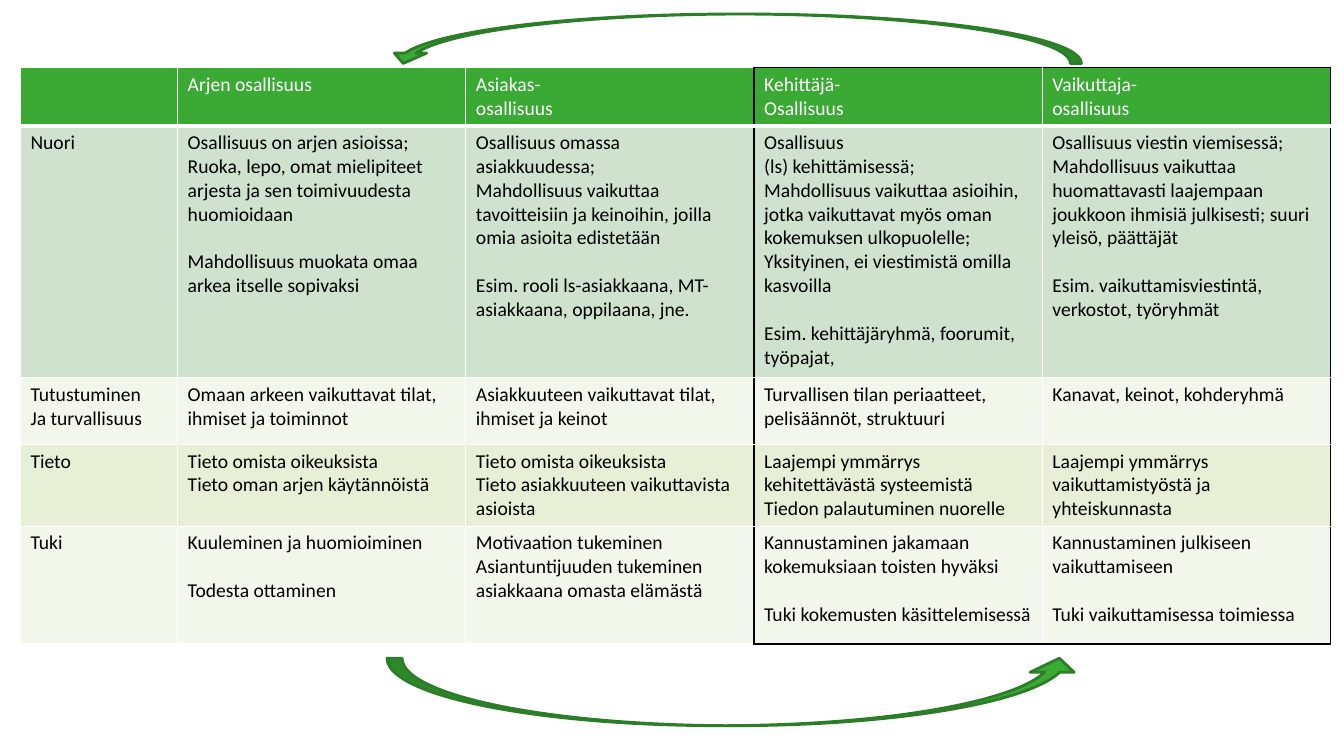
import pptx
import pptx.dml.color
import pptx.enum.shapes
import pptx.util
import lxml.etree

Pt = pptx.util.Pt
NS = "http://schemas.openxmlformats.org/drawingml/2006/main"
GREEN, WHITE, BLACK = "3AAA35", "FFFFFF", "000000"


def paint(fill, hue):
    fill.solid()
    fill.fore_color.rgb = pptx.dml.color.RGBColor.from_string(hue)


def edge(cell, side, hue, width):
    """Draw one border of a cell; side is L, R, T or B."""
    line = lxml.etree.SubElement(cell._tc.get_or_add_tcPr(), f"{{{NS}}}ln{side}", w=str(Pt(width)))
    solid = lxml.etree.SubElement(line, f"{{{NS}}}solidFill")
    lxml.etree.SubElement(solid, f"{{{NS}}}srgbClr", val=hue)


deck = pptx.Presentation()
deck.slide_width, deck.slide_height = Pt(960), Pt(540)
slide = deck.slides.add_slide(deck.slide_layouts[6])

# An empty line in a cell's text stands for a one-line gap.
grid = [
    ["", "Arjen osallisuus", "Asiakas-\nosallisuus", "Kehittäjä-\nOsallisuus",
     "Vaikuttaja-\nosallisuus"],
    ["Nuori",
     "Osallisuus on arjen asioissa;\nRuoka, lepo, omat mielipiteet arjesta ja sen "
     "toimivuudesta huomioidaan\n\nMahdollisuus muokata omaa arkea itselle sopivaksi",
     "Osallisuus omassa asiakkuudessa;\nMahdollisuus vaikuttaa tavoitteisiin ja keinoihin, "
     "joilla omia asioita edistetään\n\nEsim. rooli ls-asiakkaana, MT-asiakkaana, oppilaana, jne.",
     "Osallisuus\n(ls) kehittämisessä;\nMahdollisuus vaikuttaa asioihin, jotka vaikuttavat "
     "myös oman kokemuksen ulkopuolelle;\nYksityinen, ei viestimistä omilla kasvoilla\n\n"
     "Esim. kehittäjäryhmä, foorumit, työpajat,",
     "Osallisuus viestin viemisessä;\nMahdollisuus vaikuttaa huomattavasti laajempaan joukkoon "
     "ihmisiä julkisesti; suuri yleisö, päättäjät\n\n"
     "Esim. vaikuttamisviestintä, verkostot, työryhmät"],
    ["Tutustuminen\nJa turvallisuus",
     "Omaan arkeen vaikuttavat tilat, ihmiset ja toiminnot",
     "Asiakkuuteen vaikuttavat tilat, ihmiset ja keinot",
     "Turvallisen tilan periaatteet, pelisäännöt, struktuuri",
     "Kanavat, keinot, kohderyhmä"],
    ["Tieto",
     "Tieto omista oikeuksista\nTieto oman arjen käytännöistä",
     "Tieto omista oikeuksista\nTieto asiakkuuteen vaikuttavista asioista",
     "Laajempi ymmärrys kehitettävästä systeemistä\nTiedon palautuminen nuorelle",
     "Laajempi ymmärrys vaikuttamistyöstä ja yhteiskunnasta"],
    ["Tuki",
     "Kuuleminen ja huomioiminen\n\nTodesta ottaminen",
     "Motivaation tukeminen\nAsiantuntijuuden tukeminen asiakkaana omasta elämästä",
     "Kannustaminen jakamaan kokemuksiaan toisten hyväksi\n\nTuki kokemusten käsittelemisessä",
     "Kannustaminen julkiseen vaikuttamiseen\n\nTuki vaikuttamisessa toimiessa"],
]
widths = [112.3] + [205.9] * 4
heights = [41.4, 180, 47.5, 58.5, 84.2]
fills = [GREEN, "CEE2CE", "F3F7EB", "E7EFD7", "F3F7EB"]
style = {"name": "Calibri", "size": Pt(14), "bold": False}
last = len(grid) - 1
box = 3  # first column of the black frame

table = slide.shapes.add_table(len(heights), len(widths), Pt(14.6), Pt(48.5),
                               Pt(sum(widths)), Pt(sum(heights))).table
table.first_row = table.horz_banding = False
for col, width in zip(table.columns, widths):
    col.width = Pt(width)

for r, texts in enumerate(grid):
    table.rows[r].height = Pt(heights[r])
    for c, text in enumerate(texts):
        cell = table.cell(r, c)
        dark = {"L": c == box, "R": c in (box - 1, last),
                "T": c >= box and r == 0, "B": c >= box and r == last}
        for side, black in dark.items():
            edge(cell, side, BLACK if black else WHITE, 3 if r == 0 and side == "B" else 1)
        paint(cell.fill, fills[r])

        frame = cell.text_frame
        for i, block in enumerate(text.split("\n\n")):
            for j, words in enumerate(block.split("\n")):
                para = frame.add_paragraph() if i or j else frame.paragraphs[0]
                para.text = words
                if i and j == 0:
                    para.space_before = Pt(17)
                for key, value in style.items():
                    setattr(para.font, key, value)
                paint(para.font.fill, BLACK if r else WHITE)

for top, height, flip in [(10, 35.3, "flipH"), (470.2, 48.2, "flipV")]:
    arrow = slide.shapes.add_shape(pptx.enum.shapes.MSO_SHAPE.CURVED_DOWN_ARROW,
                                   Pt(276.5), Pt(top), Pt(496), Pt(height))
    for i, value in enumerate([0.223, 0.654, 0.208]):
        arrow.adjustments[i] = value
    arrow._element.spPr.xfrm.set(flip, "1")
    arrow.shadow.inherit = False
    paint(arrow.fill, GREEN)
    paint(arrow.line.fill, "2B7E27")
    arrow.line.width = Pt(2)

deck.save("out.pptx")
